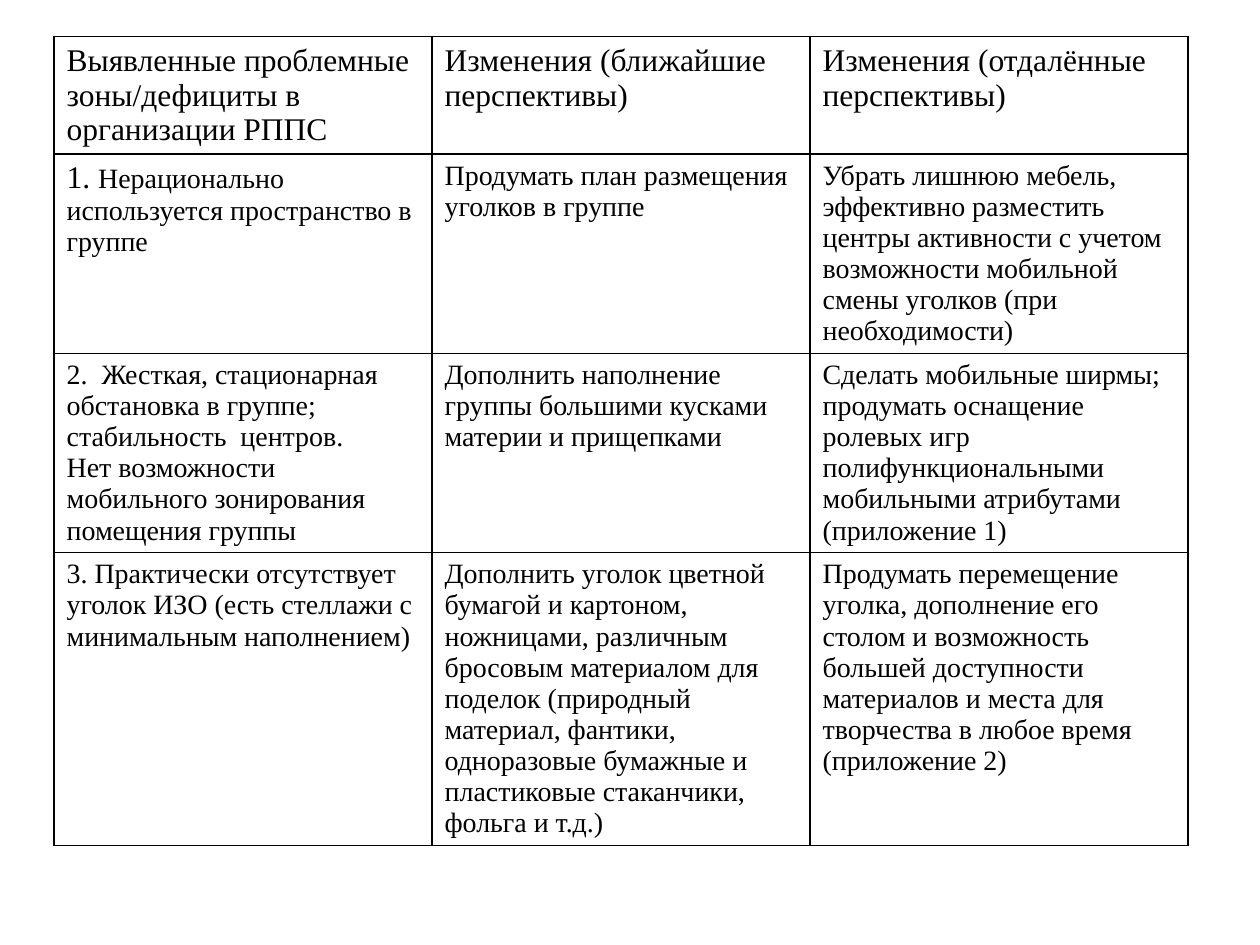
from lxml import etree
from pptx import Presentation
from pptx.dml.color import RGBColor
from pptx.oxml.ns import qn
from pptx.util import Cm, Pt

FONT = "Times New Roman"
INK = "000000"
HEADING_SIZE, BODY_SIZE = 18, 16
COLUMN_WIDTH = 7.62
ROW_HEIGHTS = [2.35, 4.01, 4.01, 5.91]
ROWS = [
    ["Выявленные проблемные зоны/дефициты в организации РППС",
     "Изменения (ближайшие перспективы)",
     "Изменения (отдалённые перспективы)"],
    ["1. ",
     "Продумать план размещения уголков в группе",
     "Убрать лишнюю мебель, эффективно разместить центры активности с учетом "
     "возможности мобильной смены уголков (при необходимости)"],
    ["2.  Жесткая, стационарная обстановка в группе; стабильность  центров.\n"
     "Нет возможности мобильного зонирования помещения группы",
     "Дополнить наполнение группы большими кусками материи и прищепками",
     "Сделать мобильные ширмы; продумать оснащение ролевых игр "
     "полифункциональными  мобильными атрибутами (приложение 1)"],
    ["3. Практически отсутствует уголок ИЗО (есть стеллажи с минимальным наполнением)",
     "Дополнить уголок цветной бумагой и картоном, ножницами, различным бросовым "
     "материалом для поделок (природный материал, фантики, одноразовые бумажные и "
     "пластиковые стаканчики, фольга и т.д.)",
     "Продумать перемещение уголка, дополнение его столом и возможность большей "
     "доступности материалов и места для творчества в любое время (приложение 2)"],
]


def format_run(run, size):
    run.font.name = FONT
    run.font.size = Pt(size)
    run.font.bold = False
    run.font.color.rgb = RGBColor.from_string(INK)


def add_borders(cell):
    properties = cell._tc.get_or_add_tcPr()
    for side in ("lnL", "lnR", "lnT", "lnB"):
        line = etree.SubElement(properties, qn(f"a:{side}"), w=str(Pt(1)))
        fill = etree.SubElement(line, qn("a:solidFill"))
        etree.SubElement(fill, qn("a:srgbClr"), val=INK)


prs = Presentation()
prs.slide_width, prs.slide_height = Cm(25.4), Cm(19.05)
slide = prs.slides.add_slide(prs.slide_layouts[6])

plan = slide.shapes.add_table(
    len(ROWS), len(ROWS[0]), Cm(1.09), Cm(0.74),
    Cm(COLUMN_WIDTH * len(ROWS[0])), Cm(sum(ROW_HEIGHTS))).table
plan.first_row = False
plan.horz_banding = False
for column in plan.columns:
    column.width = Cm(COLUMN_WIDTH)

for r, (height, texts) in enumerate(zip(ROW_HEIGHTS, ROWS)):
    plan.rows[r].height = Cm(height)
    for c, text in enumerate(texts):
        cell = plan.cell(r, c)
        cell.text_frame.text = text
        add_borders(cell)
        cell.fill.background()
        for paragraph in cell.text_frame.paragraphs:
            for run in paragraph.runs:
                format_run(run, BODY_SIZE if r else HEADING_SIZE)

first_problem = plan.cell(1, 0).text_frame.paragraphs[0]
format_run(first_problem.runs[0], HEADING_SIZE)
problem_text = first_problem.add_run()
problem_text.text = "Нерационально используется пространство в группе"
format_run(problem_text, BODY_SIZE)

prs.save("out.pptx")
